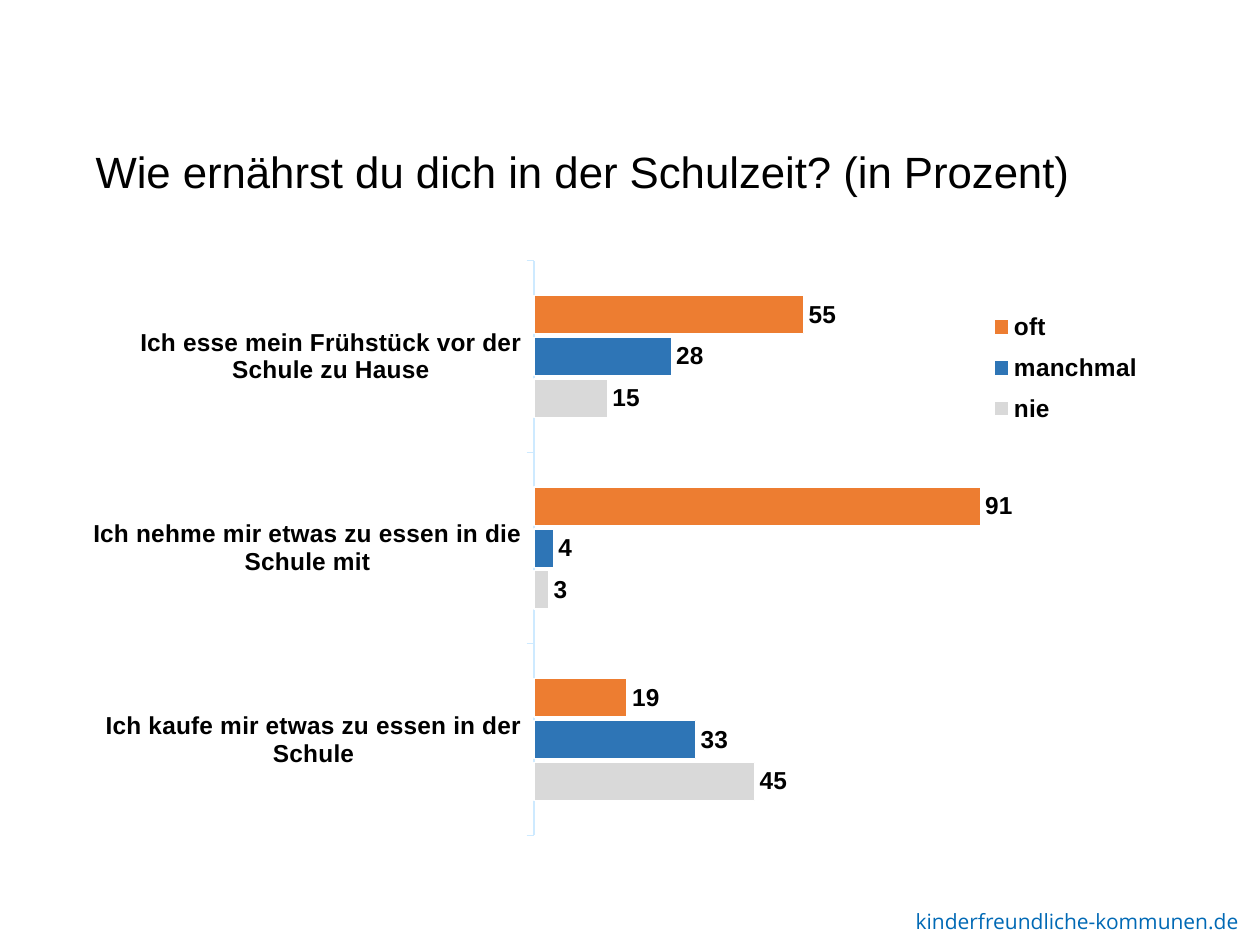
from dataclasses import dataclass

from lxml.etree import SubElement
from pptx import Presentation
from pptx.chart.data import CategoryChartData
from pptx.dml.color import RGBColor
from pptx.enum.chart import XL_CHART_TYPE as ChartType
from pptx.enum.chart import XL_LABEL_POSITION as LabelPos
from pptx.enum.chart import XL_LEGEND_POSITION as LegendPos
from pptx.enum.chart import XL_TICK_MARK as Tick
from pptx.oxml.ns import qn
from pptx.util import Pt


@dataclass
class Label:
    text: str
    box: tuple[float, float, float, float]
    font: str
    size: float
    color: str
    spacing: float = 1.0


@dataclass
class Answer:
    name: str
    values: tuple[int, ...]
    color: str


LABELS = [
    Label("kinderfreundliche-kommunen.de", (516.2, 515.5, 211, 21.6),
          "Open Sans", 12, "0069B5"),
    Label("Wie ernährst du dich in der Schulzeit? (in Prozent)",
          (47.5, 82.8, 620.6, 44.6), "Arial", 25, "000000", 0.9),
]
CATEGORIES = [
    "Ich kaufe mir etwas zu essen in der Schule",
    "Ich nehme mir etwas zu essen in die Schule mit",
    "Ich esse mein Frühstück vor der Schule zu Hause",
]
ANSWERS = [
    Answer("nie", (45, 3, 15), "D9D9D9"),
    Answer("manchmal", (33, 4, 28), "2E75B6"),
    Answer("oft", (19, 91, 55), "ED7D31"),
]
CHART_BOX = (53.3, 126.7, 620.6, 370.8)


def rgb(value: str) -> RGBColor:
    return RGBColor.from_string(value)


def style_font(font, name: str, size: float, color: str, bold: bool = False) -> None:
    font.name = name
    font.size = Pt(size)
    font.bold = bold
    font.color.rgb = rgb(color)


def chart_font(font) -> None:
    style_font(font, "Arial", 14, "000000", True)


def add_label(s, label: Label) -> None:
    tf = s.shapes.add_textbox(*map(Pt, label.box)).text_frame
    tf.word_wrap = True
    p = tf.paragraphs[0]
    p.text = label.text
    p.line_spacing = label.spacing
    style_font(p.runs[0].font, label.font, label.size, label.color)


def set_layout(parent, index: int, box: tuple[float, ...], inner: bool = False) -> None:
    for old in parent.findall(qn("c:layout")):
        parent.remove(old)
    layout = SubElement(parent, qn("c:layout"))
    parent.insert(index, layout)
    manual = SubElement(layout, qn("c:manualLayout"))
    items = [("layoutTarget", "inner")] if inner else []
    items += [("xMode", "edge"), ("yMode", "edge"), *zip("xywh", map(str, box))]
    for tag, value in items:
        SubElement(manual, qn(f"c:{tag}")).set("val", value)


def add_bar_chart(s) -> None:
    data = CategoryChartData()
    data.categories = CATEGORIES
    for answer in ANSWERS:
        data.add_series(answer.name, answer.values)
    chart = s.shapes.add_chart(
        ChartType.BAR_CLUSTERED, *map(Pt, CHART_BOX), data).chart
    chart.has_title = False
    chart_font(chart.font)

    plot = chart.plots[0]
    plot.gap_width = 182
    plot.overlap = -9
    plot.vary_by_categories = False
    for series, answer in zip(plot.series, ANSWERS):
        series.format.fill.solid()
        series.format.fill.fore_color.rgb = rgb(answer.color)
        series.format.line.color.rgb = rgb("FFFFFF")
        series.format.line.width = Pt(0.75)
        labels = series.data_labels
        labels.show_value = True
        labels.position = LabelPos.OUTSIDE_END
        chart_font(labels.font)

    axis = chart.category_axis
    axis.major_tick_mark = Tick.OUTSIDE
    axis.format.line.color.rgb = rgb("CEEAFF")
    axis.format.line.width = Pt(0.75)
    chart_font(axis.tick_labels.font)

    scale = chart.value_axis
    scale.minimum_scale = 0
    scale.maximum_scale = 100
    scale.has_major_gridlines = False
    scale.visible = False

    chart.has_legend = True
    legend = chart.legend
    legend.position = LegendPos.TOP
    legend.include_in_layout = False
    chart_font(legend.font)
    set_layout(legend._element, 1, (0.82, 0.12, 0.15, 0.21))
    plot_area = chart._chartSpace.chart.plotArea
    set_layout(plot_area, 0, (0.404, 0.06, 0.453, 0.886), inner=True)


def main() -> None:
    prs = Presentation()
    prs.slide_width, prs.slide_height = Pt(720), Pt(540)
    s = prs.slides.add_slide(prs.slide_layouts[6])
    for label in LABELS:
        add_label(s, label)
    add_bar_chart(s)
    prs.save("out.pptx")


if __name__ == "__main__":
    main()
